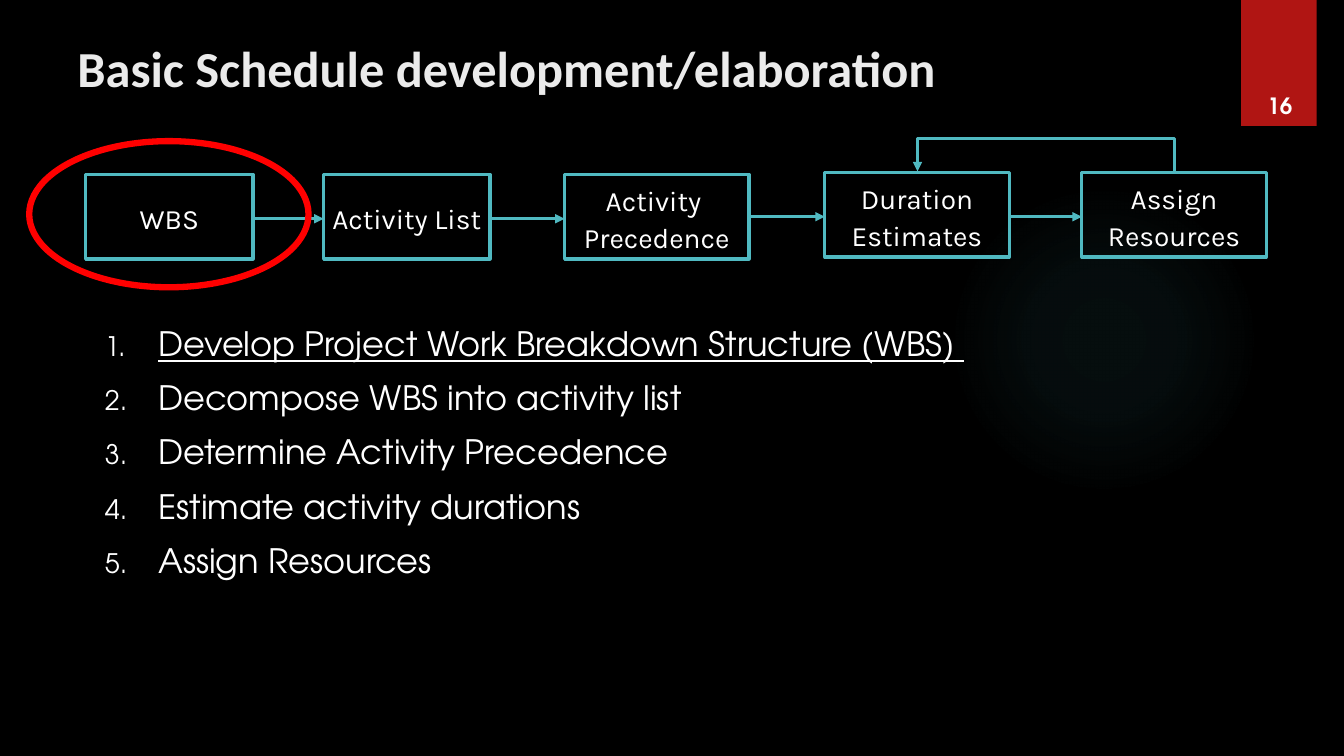
from itertools import pairwise

from lxml.etree import SubElement as sub
from pptx import Presentation
from pptx.dml.color import RGBColor
from pptx.enum.shapes import MSO_CONNECTOR as LINE, MSO_SHAPE as SHAPE
from pptx.enum.text import MSO_ANCHOR as ANCHOR, PP_ALIGN as ALIGN
from pptx.oxml.ns import qn
from pptx.util import Inches, Pt

TEAL, WHITE = "50B9C1", "FFFFFF"


def rgb(code):
    return RGBColor.from_string(code)


def grid(*steps):
    """Turn grid steps, ten to the inch, into lengths."""
    return [Inches(step / 10) for step in steps]


def node(parent, tag, **attrs):
    return sub(parent, qn(tag), {key: str(val) for key, val in attrs.items()})


def assign(target, values):
    for key, val in values.items():
        setattr(target, key, val)


class Slide:
    fonts = {
        "title": (dict(name="Calibri", size=Pt(36), bold=True), "EBEBEB"),
        "list": (dict(name="TeX Gyre Adventor", size=Pt(24)), WHITE),
        "step": (dict(name="Karla", size=Pt(20)), WHITE),
        "page": (dict(name="TeX Gyre Adventor", size=Pt(16), bold=True), WHITE),
    }

    def __init__(self, deck):
        self.page = deck.slides.add_slide(deck.slide_layouts[6])
        self.shapes = self.page.shapes
        back = self.page.background.fill
        back.solid()
        back.fore_color.rgb = rgb("000000")

    def label(self, frame, lines, style, para=None, **form):
        assign(frame, {"word_wrap": True, **form})
        font, color = self.fonts[style]
        for i, line in enumerate(lines):
            par = frame.add_paragraph() if i else frame.paragraphs[0]
            par.text = line
            assign(par, para or {})
            for run in par.runs:
                assign(run.font, font)
                run.font.color.rgb = rgb(color)
        return frame.paragraphs

    def text(self, place, lines, style, para=None, **form):
        box = self.shapes.add_textbox(*grid(*place))
        return self.label(box.text_frame, lines, style, para, **form)

    def shape(self, kind, place, fill=None, line=None, width=2.25):
        item = self.shapes.add_shape(kind, *grid(*place))
        item.shadow.inherit = False
        for part, color in ((item.fill, fill), (item.line.fill, line)):
            if color:
                part.solid()
                part.fore_color.rgb = rgb(color)
            else:
                part.background()
        if line:
            item.line.width = Pt(width)
        return item

    def glow(self, place, color, stops):
        props = self.shape(SHAPE.OVAL, place)._element.spPr
        old = props.find(qn("a:noFill"))
        grad = node(props, "a:gradFill", rotWithShape=1)
        props.replace(old, grad)
        steps = node(grad, "a:gsLst")
        for pos, alpha in stops:
            stop = node(steps, "a:gs", pos=pos * 1000)
            tint = node(stop, "a:srgbClr", val=color)
            node(tint, "a:alpha", val=alpha * 1000)
        shade = node(grad, "a:path", path="circle")
        node(shade, "a:fillToRect", l=50000, t=50000, r=50000, b=50000)

    def arrow(self, ends, kind=LINE.STRAIGHT):
        item = self.shapes.add_connector(kind, *grid(*ends))
        item.line.width = Pt(2.25)
        item.line.color.rgb = rgb(TEAL)
        props = item._element.spPr
        node(props.find(qn("a:ln")), "a:tailEnd", type="triangle")
        node(props, "a:effectLst")
        return props

    def loop(self, start, end, top):
        """Arrow that rises from start, runs along top and drops to end."""
        (x1, y1), (x2, y2) = start, end
        x, y = (x1 + x2) / 2, (y1 + y2) / 2
        high, half = y1 - y2, (x1 - x2) / 2
        props = self.arrow((x - high / 2, y + half, x + high / 2, y - half), LINE.ELBOW)
        props.find(qn("a:xfrm")).set("rot", str(270 * 60000))
        bend = props.find(qn("a:prstGeom")).find(qn("a:avLst"))
        ratio = round((y1 - top) / high * 100000)
        node(bend, "a:gd", name="adj1", fmla=f"val {ratio}")

    def items(self, place, lines):
        pars = self.text(place, lines, "list", margin_left=0, margin_right=0)
        for i, par in enumerate(pars):
            if i:
                par.space_before = Pt(10)
            props = par._p.get_or_add_pPr()
            indent = Inches(0.53)
            props.set("marL", str(indent))
            props.set("indent", str(-indent))
            node(node(props, "a:buClr"), "a:srgbClr", val=WHITE)
            node(props, "a:buSzPct", val=80000)
            node(props, "a:buFont", typeface="TeX Gyre Adventor")
            node(props, "a:buAutoNum", type="arabicPeriod")
        pars[0].runs[0].font.underline = True


def main():
    deck = Presentation()
    deck.slide_width, deck.slide_height = Inches(13.33), Inches(7.5)
    slide = Slide(deck)

    # Backdrop and heading
    slide.glow((94.1, 18.3, 30.8, 30.8), TEAL, ((0, 7), (36, 6), (69, 0)))
    slide.shape(SHAPE.RECTANGLE, (123.1, 0, 7.5, 12.5), fill="B01513")
    slide.text((6.7, 3.2, 104, 6.8), ["Basic Schedule development/elaboration"], "title")

    # Numbered steps
    slide.items((10.4, 31.5, 117.9, 29), [
        "Develop Project Work Breakdown Structure (WBS) ",
        "Decompose WBS into activity list",
        "Determine Activity Precedence",
        "Estimate activity durations",
        "Assign Resources",
    ])

    # Flow of boxes: left, top, width, lines
    high = 8.4
    flow = [
        (8.5, 17.3, 16.6, ["WBS"]),
        (32.1, 17.3, 16.5, ["Activity List"]),
        (56, 17.3, 18.3, ["Activity ", "Precedence"]),
        (81.8, 17.1, 18.3, ["Duration", "Estimates"]),
        (107.3, 17.1, 18.3, ["Assign\vResources"]),
    ]
    for left, top, wide, lines in flow:
        box = slide.shape(SHAPE.RECTANGLE, (left, top, wide, high), line=TEAL)
        slide.label(box.text_frame, lines, "step",
                    dict(alignment=ALIGN.CENTER, line_spacing=1.1),
                    word_wrap=False, vertical_anchor=ANCHOR.MIDDLE)
    for (left, _, wide, _), (goal, top, _, _) in pairwise(flow):
        slide.arrow((left + wide, top + 4.4, goal, top + 4.4))
    slide.loop((116.5, 17.1), (91, 17), 13.7)

    # Highlight and page number
    slide.shape(SHAPE.OVAL, (2.9, 14, 27.7, 14.5), line="FF0000", width=4.5)
    slide.text((124, 8.3, 5.9, 4), ["16"], "page", dict(alignment=ALIGN.CENTER),
               vertical_anchor=ANCHOR.BOTTOM)

    deck.save("out.pptx")


if __name__ == "__main__":
    main()
